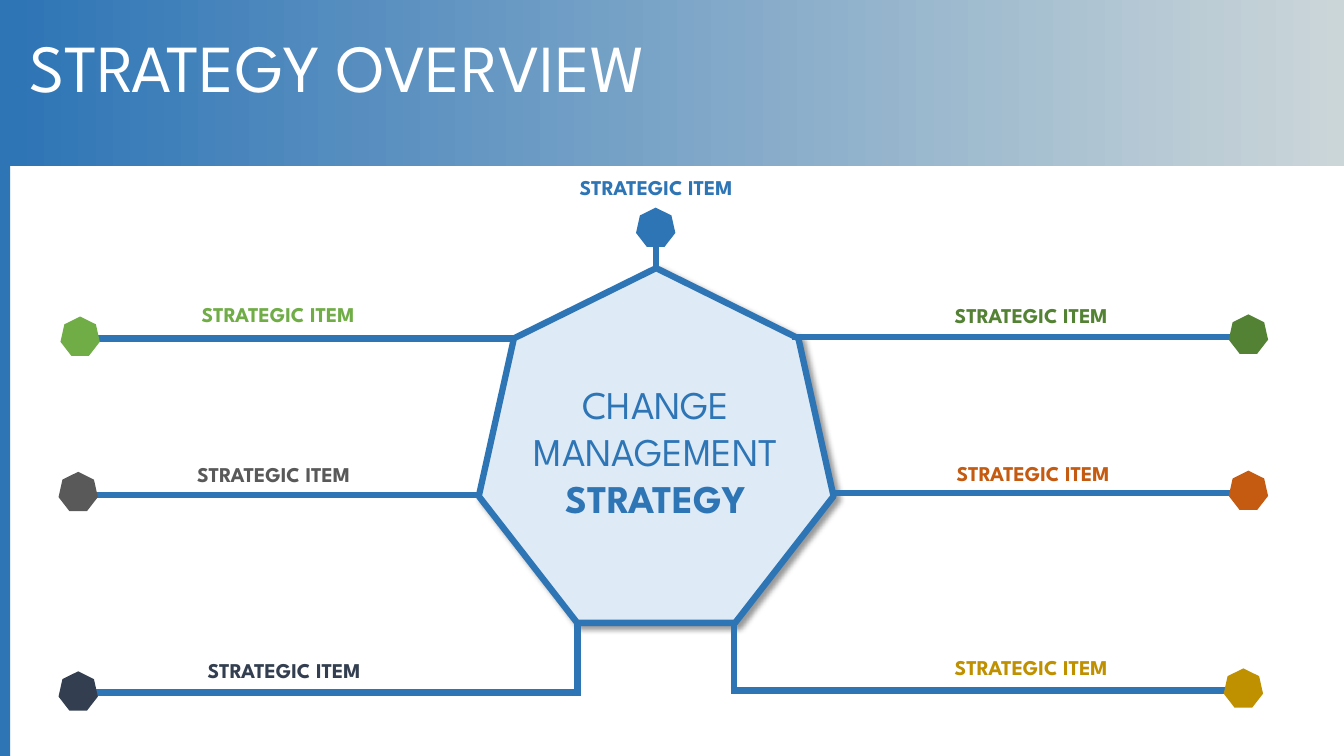
from lxml.etree import SubElement
from pptx import Presentation
from pptx.dml.color import RGBColor
from pptx.enum.shapes import MSO_CONNECTOR as Link, MSO_SHAPE as Form
from pptx.enum.text import MSO_AUTO_SIZE as Fit, PP_ALIGN as Align
from pptx.oxml.ns import qn
from pptx.util import Pt

BLUE = RGBColor(0x2E, 0x75, 0xB6)
PALE = RGBColor(0xDE, 0xEB, 0xF7)
MIST = RGBColor(0xCB, 0xD6, 0xD9)
WHITE = RGBColor(0xFF, 0xFF, 0xFF)
GREEN = RGBColor(0x54, 0x82, 0x35)
LIME = RGBColor(0x70, 0xAD, 0x47)
RUST = RGBColor(0xC5, 0x5A, 0x11)
GOLD = RGBColor(0xBF, 0x90, 0x00)
NAVY = RGBColor(0x33, 0x3F, 0x50)
GREY = RGBColor(0x59, 0x59, 0x59)

DOT = 28.1
# Colour, label (left, top, width), dot (left, top), lines (x1, y1, x2, y2)
ITEMS = [
    (BLUE, (290.9, 121, 355.7), (454.3, 148.3), [(468.7, 191.5, 468.7, 162.7)]),
    (GREEN, (632.2, 212.4, 208.8), (877.7, 224.6), [(565.9, 240.5, 884.2, 240.5)]),
    (RUST, (633.6, 325.4, 208.8), (877.7, 336.2), [(595.4, 352.1, 887.8, 352.1)]),
    (GOLD, (632.2, 463.7, 208.8), (874.1, 477.4),
     [(524.2, 493.2, 524.2, 445), (522, 493.2, 887.8, 493.2)]),
    (NAVY, (98.6, 465.8, 208.8), (41.8, 479.5),
     [(412.6, 493.9, 412.6, 445), (49, 494.6, 414.7, 494.6)]),
    (GREY, (45.4, 326.2, 300.2), (41.8, 337), [(49, 353.5, 342, 353.5)]),
    (LIME, (94.3, 211.7, 208.8), (43.2, 226.1), [(49, 241.9, 367.2, 241.9)]),
]


class Board:
    font = "League Spartan"
    width = Pt(4.5)

    def __init__(self, slide):
        self.slide = slide

    def shape(self, form, box, fill, line=None):
        """The fill is one colour, or a list of two for a gradient."""
        shape = self.slide.shapes.add_shape(form, *map(Pt, box))
        shape.shadow.inherit = False
        if isinstance(fill, list):
            shape.fill.gradient()
            shape.fill.gradient_angle = 0
            for stop, color in zip(shape.fill.gradient_stops, fill):
                stop.color.rgb = color
        else:
            shape.fill.solid()
            shape.fill.fore_color.rgb = fill
        if line is None:
            shape.line.fill.background()
        else:
            shape.line.color.rgb = line
            shape.line.width = self.width
        return shape

    def shade(self, shape):
        effects = shape._element.spPr.find(qn("a:effectLst"))
        shadow = SubElement(effects, qn("a:outerShdw"), blurRad=str(Pt(4)),
                            dist=str(Pt(3)), dir="2700000", algn="tl", rotWithShape="0")
        black = SubElement(shadow, qn("a:srgbClr"), val="000000")
        SubElement(black, qn("a:alpha"), val="40000")

    def line(self, ends):
        line = self.slide.shapes.add_connector(Link.STRAIGHT, *map(Pt, ends))
        line.line.color.rgb = BLUE
        line.line.width = self.width
        SubElement(line._element.spPr, qn("a:effectLst"))

    def text(self, box, rows, size, color, align=Align.CENTER, wrap=True):
        """Each row is a pair of wording and bold flag."""
        frame = self.slide.shapes.add_textbox(*map(Pt, box)).text_frame
        frame.word_wrap = wrap
        frame.auto_size = Fit.SHAPE_TO_FIT_TEXT
        for i, (words, bold) in enumerate(rows):
            para = frame.add_paragraph() if i else frame.paragraphs[0]
            para.text = words
            para.alignment = align
            font = para.font
            font.name, font.size, font.bold = self.font, Pt(size), bold
            font.color.rgb = color


def main():
    deck = Presentation()
    deck.slide_width, deck.slide_height = Pt(960), Pt(540)
    board = Board(deck.slides.add_slide(deck.slide_layouts[6]))

    # Header and side bar
    board.shape(Form.RECTANGLE, (7.2, 0, 952.8, 118.8), [BLUE, MIST])
    board.shape(Form.RECTANGLE, (0, 0, 7.2, 540), BLUE)
    board.text((13.7, 14.4, 504.7, 65.5), [("STRATEGY OVERVIEW", False)],
               48, WHITE, Align.LEFT, wrap=False)

    # Central heptagon
    hub = board.shape(Form.HEPTAGON, (342, 191.5, 253.4, 253.4), PALE, BLUE)
    board.shade(hub)
    board.text((359.3, 267.8, 218.2, 108.7),
               [("CHANGE", False), ("MANAGEMENT", False), ("STRATEGY", True)], 28, BLUE)

    # Strategic items around it
    for color, label, dot, lines in ITEMS:
        for ends in lines:
            board.line(ends)
        board.shape(Form.HEPTAGON, (*dot, DOT, DOT), color)
        board.text((*label, 25.2), [("STRATEGIC ITEM", True)], 15, color)

    deck.save("out.pptx")


if __name__ == "__main__":
    main()
